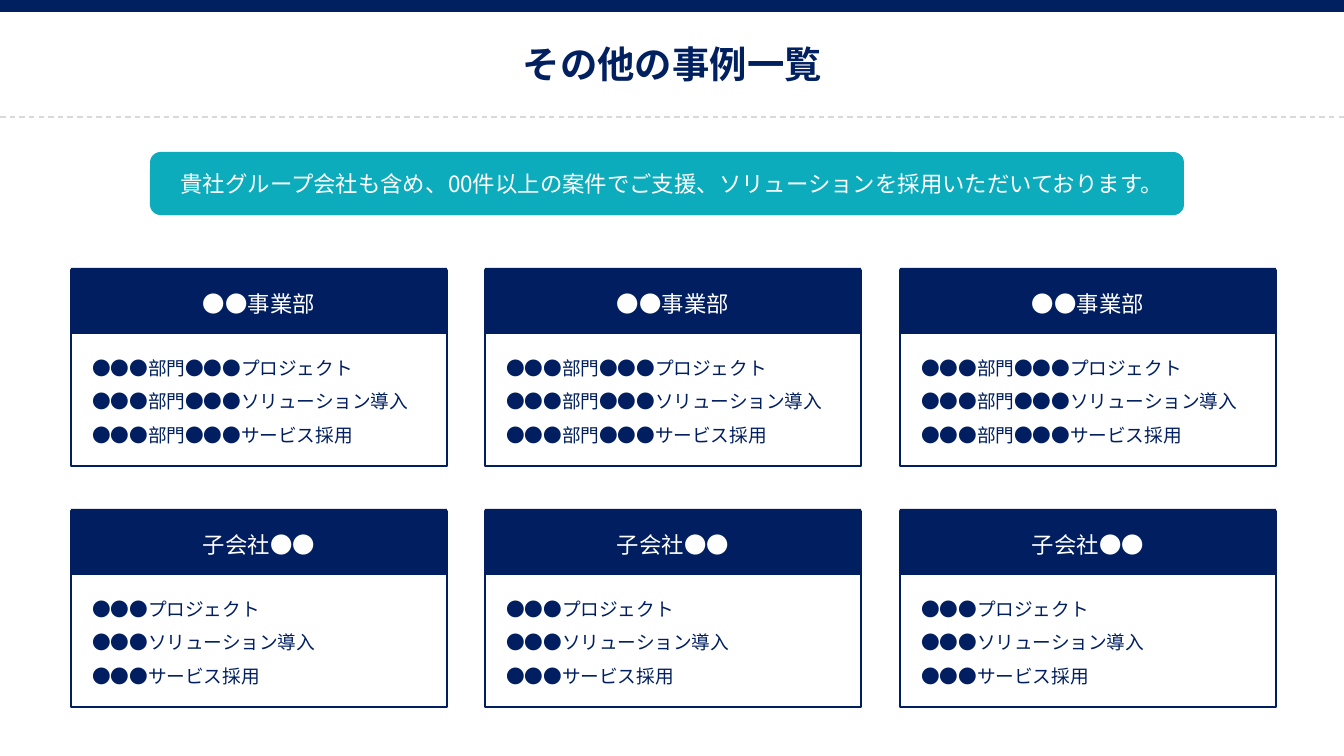
from pptx import Presentation
from pptx.dml.color import RGBColor
from pptx.enum.dml import MSO_LINE
from pptx.enum.shapes import MSO_CONNECTOR, MSO_SHAPE
from pptx.enum.text import MSO_AUTO_SIZE, PP_ALIGN
from pptx.oxml.ns import qn
from pptx.util import Emu, Pt
from lxml.etree import SubElement

FONT = "Noto Sans CJK JP"
NAVY = RGBColor(0x00, 0x20, 0x60)
INK = RGBColor(0x01, 0x1F, 0x60)
TEAL = RGBColor(0x0D, 0xAC, 0xBD)
GRAY = RGBColor(0xD9, 0xD9, 0xD9)
WHITE = RGBColor(0xFF, 0xFF, 0xFF)

WIDE, HIGH = 1344, 756
LEFT, TOP = 71, 268
STEP_X, STEP_Y = 829, 241

ROWS = [
    ("●●事業部", 348, ["●●●部門●●●プロジェクト",
                    "●●●部門●●●ソリューション導入",
                    "●●●部門●●●サービス採用"]),
    ("子会社●●", 253, ["●●●プロジェクト",
                    "●●●ソリューション導入",
                    "●●●サービス採用"]),
]


def px(num):
    """Turn slide pixels into EMU."""
    return Emu(num * 9144000 // WIDE)


def add_box(shapes, area, fill, line=None, kind=MSO_SHAPE.RECTANGLE):
    """Add a filled shape, outlined when a line colour is given."""
    box = shapes.add_shape(kind, *map(px, area))
    box.shadow.inherit = False
    box.fill.solid()
    box.fill.fore_color.rgb = fill
    if line is None:
        box.line.fill.background()
    else:
        box.line.color.rgb = line
        box.line.width = Pt(0.75)


def add_text(shapes, area, lines, size, color, align=PP_ALIGN.CENTER, after=None, bold=False):
    """Add an unwrapped text box with one paragraph per line."""
    frame = shapes.add_textbox(*map(px, area)).text_frame
    frame.word_wrap = False
    frame.auto_size = MSO_AUTO_SIZE.SHAPE_TO_FIT_TEXT
    for num, line in enumerate(lines):
        para = frame.add_paragraph() if num else frame.paragraphs[0]
        para.alignment = align
        para.space_after = after
        run = para.add_run()
        run.text = line
        font = run.font
        font.name, font.size, font.bold = FONT, Pt(size), bold
        font.color.rgb = color
        SubElement(run._r.get_or_add_rPr(), qn("a:ea"), typeface=FONT)


def add_rule(shapes, y):
    """Add the dashed rule across the slide."""
    rule = shapes.add_connector(MSO_CONNECTOR.STRAIGHT, 0, px(y), px(WIDE), px(y))
    rule.line.color.rgb = GRAY
    rule.line.width = Pt(0.75)
    rule.line.dash_style = MSO_LINE.DASH
    SubElement(rule._element.spPr, qn("a:effectLst"))


def add_banner(shapes):
    """Add the teal message banner."""
    group = shapes.add_group_shape().shapes
    add_box(group, (150, 152, 1034, 63), TEAL, kind=MSO_SHAPE.ROUNDED_RECTANGLE)
    text = "貴社グループ会社も含め、00件以上の案件でご支援、ソリューションを採用いただいております。"
    add_text(group, (160, 164, 1024, 40), [text], 12, WHITE)


def add_card(shapes, x, y, head, width, cases):
    """Add one case card with its header and list."""
    group = shapes.add_group_shape().shapes
    add_box(group, (x, y + 2, 376, 196), WHITE, INK)
    add_box(group, (x, y, 376, 66), INK)
    add_text(group, (x + 118, y + 16, 140, 40), [head], 12, WHITE)
    add_text(group, (x + 8, y + 82, width, 103), cases, 10, INK, PP_ALIGN.LEFT, Pt(6))


def main():
    """Build and save the slide."""
    deck = Presentation()
    deck.slide_width, deck.slide_height = px(WIDE), px(HIGH)
    shapes = deck.slides.add_slide(deck.slide_layouts[6]).shapes
    add_banner(shapes)
    add_box(shapes, (0, 0, WIDE, 12), NAVY)
    add_text(shapes, (508, 35, 329, 59), ["その他の事例一覧"], 20, NAVY, bold=True)
    add_rule(shapes, 117)
    for row, (head, width, cases) in enumerate(ROWS):
        for col in range(3):
            x = LEFT + col * STEP_X // 2
            add_card(shapes, x, TOP + row * STEP_Y, head, width, cases)
    deck.save("out.pptx")


if __name__ == "__main__":
    main()
